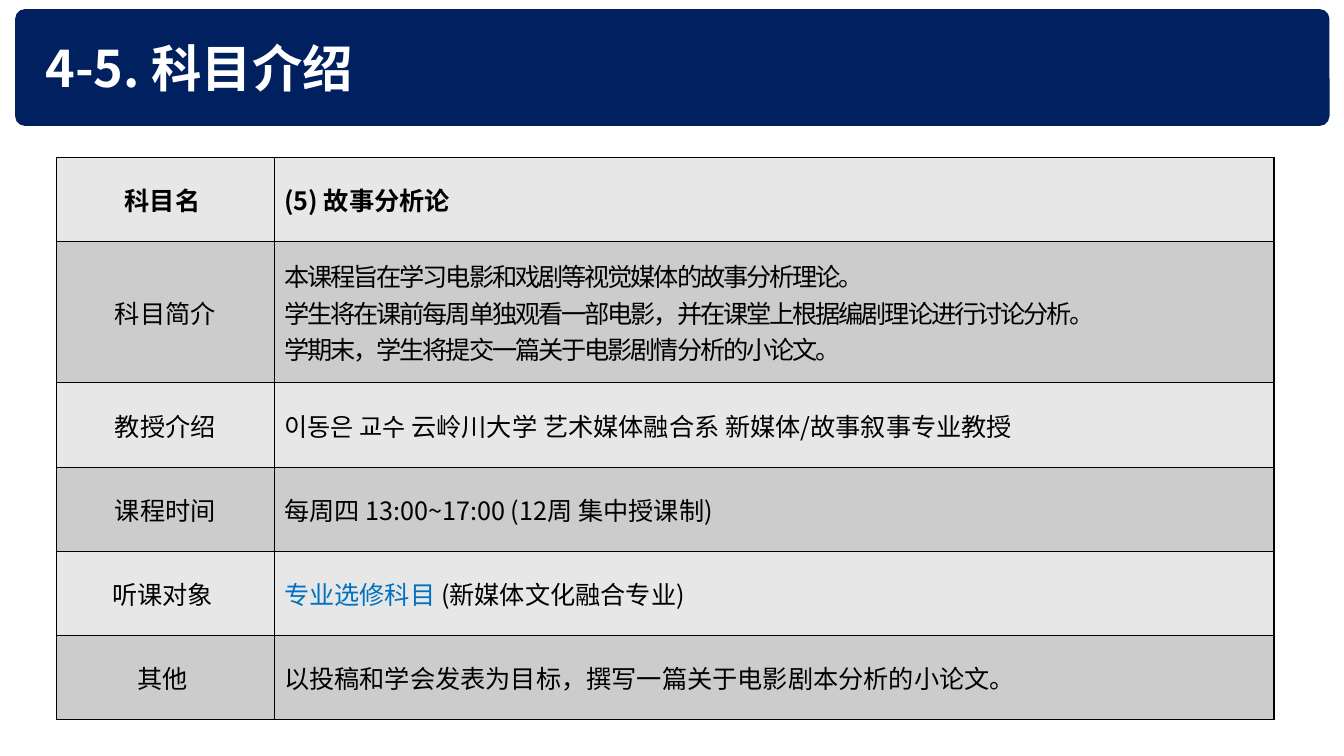
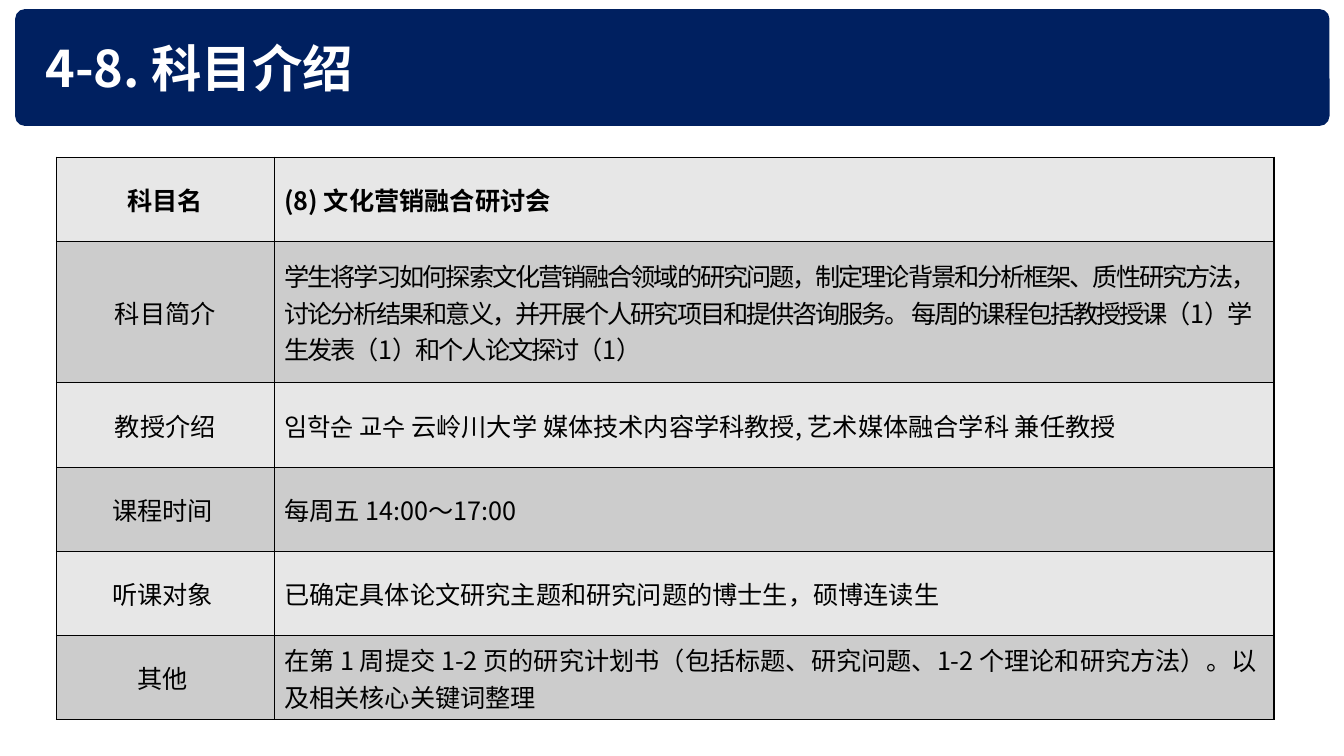
"""Build two course introduction slides, each with a title band and a table."""
from lxml.etree import SubElement
from pptx import Presentation
from pptx.dml.color import RGBColor
from pptx.enum.shapes import MSO_SHAPE
from pptx.enum.text import MSO_ANCHOR, MSO_AUTO_SIZE, PP_ALIGN
from pptx.oxml import parse_xml
from pptx.oxml.ns import nsdecls, qn
from pptx.util import Pt

FONT = "Noto Sans CJK KR"
NAVY = RGBColor(0x00, 0x20, 0x60)
WHITE = RGBColor(0xFF, 0xFF, 0xFF)
BLACK = RGBColor(0x00, 0x00, 0x00)
BLUE = RGBColor(0x00, 0x70, 0xC0)
ROW_FILLS = (RGBColor(0xE7, 0xE7, 0xE7), RGBColor(0xCC, 0xCC, 0xCC))

NAME_ROW, SUMMARY_ROW = 0, 1
COLUMN_WIDTHS = (155.5, 714.3)
ROW_HEIGHTS = (60.2, 101, 60.2, 60.2, 60.2, 60.2)

COURSES = [
    ("4-5. 科目介绍", [
        ("科目名 ", ["(5) 故事分析论"]),
        ("科目简介", [
            "本课程旨在学习电影和戏剧等视觉媒体的故事分析理论。",
            "学生将在课前每周单独观看一部电影，并在课堂上根据编剧理论进行讨论分析。",
            "学期末，学生将提交一篇关于电影剧情分析的小论文。",
        ]),
        ("教授介绍", ["이동은 교수 云岭川大学 艺术媒体融合系 新媒体/故事叙事专业教授"]),
        ("课程时间", ["每周四 13:00~17:00 (12周 集中授课制)"]),
        ("听课对象 ", [[("专业选修科目 ", BLUE), ("(新媒体文化融合专业)", BLACK)]]),
        ("其他 ", ["以投稿和学会发表为目标，撰写一篇关于电影剧本分析的小论文。"]),
    ]),
    ("4-8. 科目介绍", [
        ("科目名", ["(8) 文化营销融合研讨会"]),
        ("科目简介", [
            "学生将学习如何探索文化营销融合领域的研究问题，制定理论背景和分析框架、质性研究方法，"
            "讨论分析结果和意义，并开展个人研究项目和提供咨询服务。 "
            "每周的课程包括教授授课（1）学生发表（1）和个人论文探讨（1）",
        ]),
        ("教授介绍", ["임학순 교수 云岭川大学 媒体技术内容学科教授, 艺术媒体融合学科 兼任教授"]),
        ("课程时间 ", ["每周五 14:00～17:00"]),
        ("听课对象 ", ["已确定具体论文研究主题和研究问题的博士生，硕博连读生"]),
        ("其他 ", [
            "在第 1 周提交 1-2 页的研究计划书（包括标题、研究问题、1-2 个理论和研究方法）。"
            "以及相关核心关键词整理",
        ]),
    ]),
]


def write_text(frame, paragraphs, size=18, color=BLACK, bold=False,
               align=PP_ALIGN.LEFT, spacing=0):
    for index, content in enumerate(paragraphs):
        para = frame.add_paragraph() if index else frame.paragraphs[0]
        para.alignment = align
        spans = [(content, color)] if isinstance(content, str) else content
        for text, span_color in spans:
            span = para.add_run()
            span.text = text
            span.font.size = Pt(size)
            span.font.bold = bold
            span.font.color.rgb = span_color
            span.font.name = FONT
            properties = span._r.get_or_add_rPr()
            properties.set("spc", str(round(spacing * 100)))
            SubElement(properties, qn("a:ea"), typeface=FONT)


def add_title(page, text):
    band = page.shapes.add_shape(
        MSO_SHAPE.ROUNDED_RECTANGLE, Pt(10.8), Pt(6.5), Pt(938.9), Pt(83.5))
    band.adjustments[0] = 0.085
    band.shadow.inherit = False
    band.fill.solid()
    band.fill.fore_color.rgb = NAVY
    band.line.fill.background()

    title = page.shapes.title
    title.element.addprevious(band.element)
    title.left, title.top, title.width, title.height = Pt(25.2), Pt(22.3), Pt(844.6), Pt(51.1)
    title.text_frame.auto_size = MSO_AUTO_SIZE.NONE
    title.text_frame.vertical_anchor = MSO_ANCHOR.MIDDLE
    write_text(title.text_frame, [text], size=36, color=WHITE, bold=True)


def style_cell(cell, fill):
    properties = cell._tc.get_or_add_tcPr()
    for side in ("lnL", "lnR", "lnT", "lnB"):
        properties.append(parse_xml(
            f'<a:{side} {nsdecls("a")} w="{Pt(1)}"><a:solidFill>'
            f'<a:srgbClr val="{BLACK}"/></a:solidFill></a:{side}>'))
    cell.fill.solid()
    cell.fill.fore_color.rgb = fill
    cell.vertical_anchor = MSO_ANCHOR.MIDDLE


def add_course_table(page, rows):
    table = page.shapes.add_table(
        len(rows), len(COLUMN_WIDTHS), Pt(40.3), Pt(112.3),
        Pt(sum(COLUMN_WIDTHS)), Pt(sum(ROW_HEIGHTS))).table
    table.first_row = table.horz_banding = False
    for column, width in zip(table.columns, COLUMN_WIDTHS):
        column.width = Pt(width)
    for index, (label, details) in enumerate(rows):
        table.rows[index].height = Pt(ROW_HEIGHTS[index])
        label_cell, detail_cell = table.cell(index, 0), table.cell(index, 1)
        for cell in (label_cell, detail_cell):
            style_cell(cell, ROW_FILLS[index % 2])
        bold = index == NAME_ROW
        write_text(label_cell.text_frame, [label], bold=bold, align=PP_ALIGN.CENTER)
        write_text(detail_cell.text_frame, details, bold=bold,
                   spacing=-1.5 if index == SUMMARY_ROW else 0)


def main():
    deck = Presentation()
    deck.slide_width, deck.slide_height = Pt(960), Pt(540)
    title_only = deck.slide_layouts.get_by_name("Title Only")
    for title, rows in COURSES:
        page = deck.slides.add_slide(title_only)
        add_title(page, title)
        add_course_table(page, rows)
    deck.save("out.pptx")


if __name__ == "__main__":
    main()
